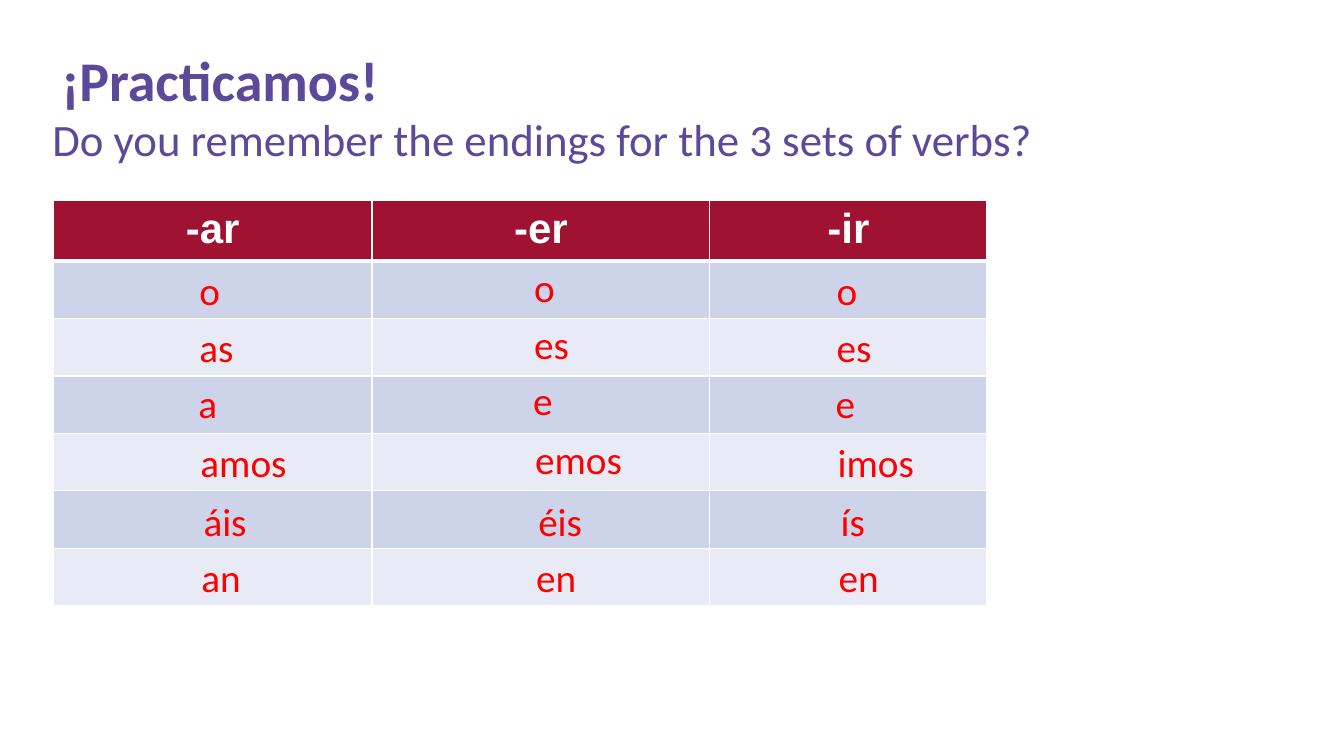
from lxml import etree
from pptx import Presentation
from pptx.dml.color import RGBColor
from pptx.enum import text
from pptx.oxml import ns
from pptx.util import Inches, Pt

PURPLE = RGBColor(0x5B, 0x49, 0x9A)
CRIMSON = RGBColor(0x9F, 0x12, 0x31)
RED = RGBColor(0xFF, 0x00, 0x00)
WHITE = RGBColor(0xFF, 0xFF, 0xFF)
BANDS = (RGBColor(0xCD, 0xD4, 0xEA), RGBColor(0xE8, 0xEB, 0xF5))

HEADINGS = ("-ar", "-er", "-ir")
COLUMN_WIDTHS = (3.16, 3.35, 2.75)
HEADER_HEIGHT = 0.59
ROW_HEIGHT = 0.57

ENDINGS = (
    (1.88, 0, ("o", "as", "a", "amos", "áis", "an")),
    (5.2, -0.03, ("o", "es", "e", "emos", "éis", "en")),
    (8.2, 0, ("o", "es", "e", "imos", "ís", "en")),
)
ENDING_ROWS = (
    (0, 2.59, 0.68),
    (0, 3.16, 0.7),
    (-0.01, 3.71, 0.69),
    (0.01, 4.3, 1.36),
    (0.04, 4.88, 0.69),
    (0.02, 5.44, 1.07),
)


def style_font(paragraph, name, size, color, bold=False):
    font = paragraph.runs[0].font
    font.name = name
    font.size = Pt(size)
    font.bold = bold
    font.color.rgb = color


def add_text(slide, words, box, size, color, bold=False):
    shape = slide.shapes.add_textbox(*map(Inches, box))
    frame = shape.text_frame
    frame.text = words
    frame.word_wrap = True
    style_font(frame.paragraphs[0], "Calibri", size, color, bold)
    return frame


def add_title(slide):
    frame = add_text(slide, "¡Practicamos!", (0.51, 0.4, 11.5, 0.68), 40, PURPLE, True)
    properties = frame.paragraphs[0]._p.get_or_add_pPr()
    properties.set("marL", str(Inches(0.44)))
    properties.set("indent", str(-Inches(0.44)))


def set_borders(cell, bottom_width):
    properties = cell._tc.get_or_add_tcPr()
    for side, width in (("L", 1), ("R", 1), ("T", 1), ("B", bottom_width)):
        line = etree.SubElement(properties, ns.qn(f"a:ln{side}"), w=str(Pt(width)))
        fill = etree.SubElement(line, ns.qn("a:solidFill"))
        etree.SubElement(fill, ns.qn("a:srgbClr"), val=str(WHITE))


def style_cell(cell, color, bottom_width=1):
    set_borders(cell, bottom_width)
    cell.fill.solid()
    cell.fill.fore_color.rgb = color
    cell.margin_left = cell.margin_right = Inches(0.08)


def add_verb_table(slide):
    row_count = len(ENDING_ROWS)
    height = HEADER_HEIGHT + row_count * ROW_HEIGHT
    frame = slide.shapes.add_table(
        row_count + 1, len(HEADINGS), Inches(0.53), Inches(1.99),
        Inches(sum(COLUMN_WIDTHS)), Inches(height))
    table = frame.table
    for column, width in zip(table.columns, COLUMN_WIDTHS):
        column.width = Inches(width)
    for index, row in enumerate(table.rows):
        row.height = Inches(ROW_HEIGHT if index else HEADER_HEIGHT)
        for cell in row.cells:
            if index:
                style_cell(cell, BANDS[(index - 1) % 2])
            else:
                style_cell(cell, CRIMSON, 3)
    for cell, heading in zip(table.rows[0].cells, HEADINGS):
        cell.text_frame.text = heading
        paragraph = cell.text_frame.paragraphs[0]
        paragraph.alignment = text.PP_ALIGN.CENTER
        style_font(paragraph, "Arial", 30, WHITE, True)


def add_endings(slide):
    for left, rise, endings in ENDINGS:
        for index, (ending, row) in enumerate(zip(endings, ENDING_ROWS)):
            nudge, top, width = row
            if index < 4:
                top += rise
            frame = add_text(slide, ending, (left + nudge, top, width, 0.57), 28, RED)
            frame.auto_size = text.MSO_AUTO_SIZE.SHAPE_TO_FIT_TEXT


def main():
    presentation = Presentation()
    presentation.slide_width = Inches(13.33)
    presentation.slide_height = Inches(7.5)
    slide = presentation.slides.add_slide(presentation.slide_layouts[6])
    add_title(slide)
    add_text(slide, "Do you remember the endings for the 3 sets of verbs?",
             (0.42, 1.06, 13.01, 1.23), 32, PURPLE)
    add_verb_table(slide)
    add_endings(slide)
    presentation.save("out.pptx")


if __name__ == "__main__":
    main()
